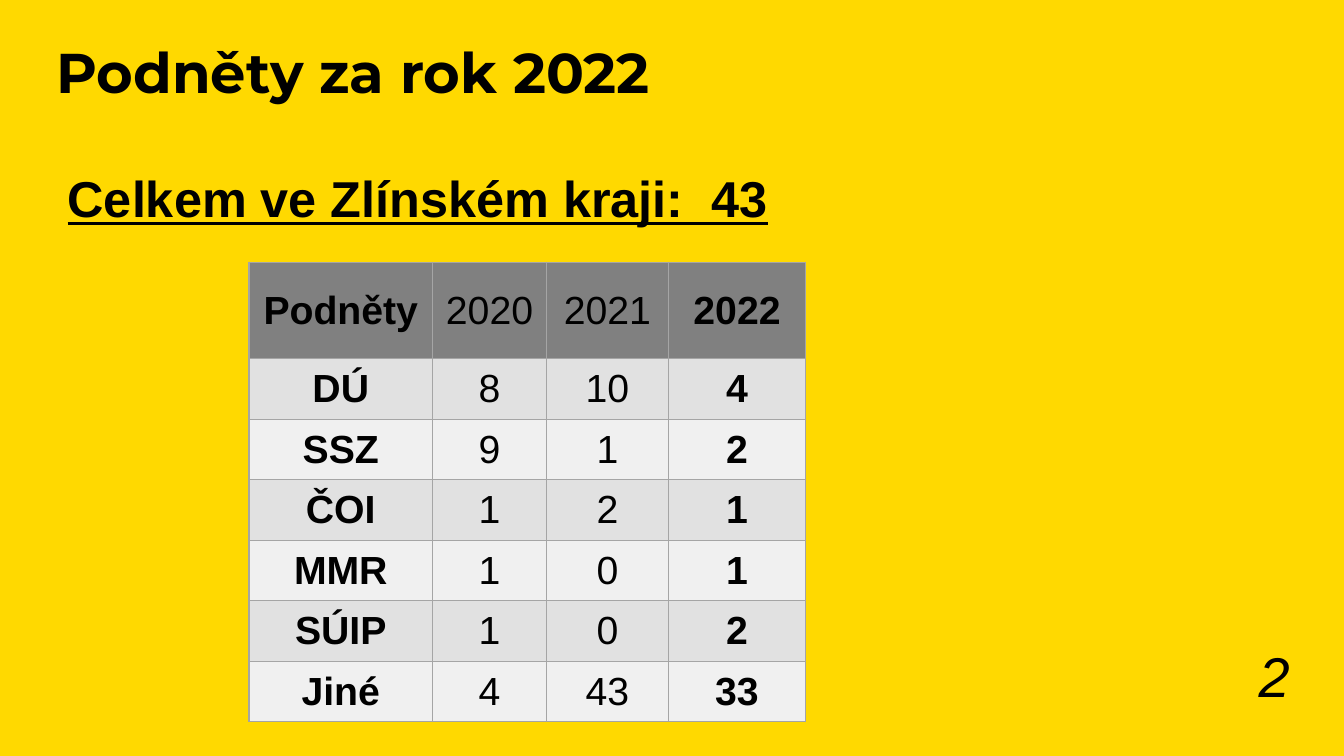
from lxml.etree import SubElement
from pptx import Presentation
from pptx.dml.color import RGBColor
from pptx.enum.text import MSO_ANCHOR as Anchor, MSO_AUTO_SIZE as AutoSize, PP_ALIGN as Align
from pptx.oxml.ns import qn
from pptx.util import Inches, Pt

COMPLAINTS = [
    ("Podněty", "2020", "2021", "2022"),
    ("DÚ", 8, 10, 4),
    ("SSZ", 9, 1, 2),
    ("ČOI", 1, 2, 1),
    ("MMR", 1, 0, 1),
    ("SÚIP", 1, 0, 2),
    ("Jiné", 4, 43, 33),
]


def color(value):
    """Turn a hex string into a colour."""
    return RGBColor.from_string(value)


class SlideBuilder:
    """Holds the style and the current slide; lengths are percentages of the slide."""

    font, heading_font, ink = "Arial", "Montserrat", "000000"
    background, border = "FFD900", "A5A5A5"
    header_fill, band_fills = "808080", ("F0F0F0", "E1E1E1")

    def __init__(self, presentation):
        """Add a title and content slide with a plain background."""
        self.width, self.height = presentation.slide_width, presentation.slide_height
        self.slide = presentation.slides.add_slide(presentation.slide_layouts[1])
        fill = self.slide.background.fill
        fill.solid()
        fill.fore_color.rgb = color(self.background)

    def across(self, share):
        """Return a percentage of the slide width."""
        return round(self.width * share / 100)

    def down(self, share):
        """Return a percentage of the slide height."""
        return round(self.height * share / 100)

    def box(self, left, top, width, height):
        """Return the four lengths of a box."""
        return self.across(left), self.down(top), self.across(width), self.down(height)

    def set_text(self, frame, text, size, align=Align.LEFT, font=None,
                 bold=False, italic=False, underline=False):
        """Put one formatted paragraph into a text frame and return it."""
        frame.text = text
        paragraph = frame.paragraphs[0]
        paragraph.alignment = align
        paragraph.space_before = Pt(0)
        for run in paragraph.runs:
            run.font.name, run.font.size = font or self.font, Pt(size)
            run.font.bold, run.font.italic, run.font.underline = bold, italic, underline
            run.font.color.rgb = color(self.ink)
        return paragraph

    def placeholder(self, shape, box, text, size, **style):
        """Move a placeholder, fill it from the top and return its paragraph."""
        shape.left, shape.top, shape.width, shape.height = self.box(*box)
        frame = shape.text_frame
        frame.auto_size, frame.vertical_anchor = AutoSize.NONE, Anchor.TOP
        return self.set_text(frame, text, size, bold=True, **style)

    def title(self, text, box):
        """Set the slide title."""
        paragraph = self.placeholder(self.slide.shapes.title, box, text, 40,
                                     font=self.heading_font)
        paragraph.line_spacing = 0.9

    def body(self, text, box):
        """Set the underlined summary line without a bullet."""
        paragraph = self.placeholder(self.slide.placeholders[1], box, text, 36, underline=True)
        properties = paragraph._p.get_or_add_pPr()
        properties.set("marL", "0")
        properties.set("indent", "0")
        SubElement(properties, qn("a:buNone"))

    def page_number(self, text, box):
        """Add the page number in the lower right corner."""
        frame = self.slide.shapes.add_textbox(*self.box(*box)).text_frame
        frame.word_wrap, frame.vertical_anchor = True, Anchor.BOTTOM
        self.set_text(frame, text, 40, Align.RIGHT, italic=True)

    def cell(self, cell, text, fill, bold):
        """Fill, frame and label one table cell."""
        properties = cell._tc.get_or_add_tcPr()
        for side in ("lnL", "lnR", "lnT", "lnB"):
            line = SubElement(properties, qn(f"a:{side}"), w=str(Pt(1)))
            SubElement(SubElement(line, qn("a:solidFill")), qn("a:srgbClr"), val=self.border)
        cell.fill.solid()
        cell.fill.fore_color.rgb = color(fill)
        cell.vertical_anchor = Anchor.MIDDLE
        self.set_text(cell.text_frame, text, 28, Align.CENTER, bold=bold)

    def table(self, rows, left, top, widths, header_height, row_height):
        """Add a banded table with bold first and last columns."""
        heights = [header_height] + [row_height] * (len(rows) - 1)
        box = self.box(left, top, sum(widths), sum(heights))
        table = self.slide.shapes.add_table(len(rows), len(widths), *box).table
        for column, width in zip(table.columns, widths):
            column.width = self.across(width)
        for index, (row, height) in enumerate(zip(rows, heights)):
            table.rows[index].height = self.down(height)
            fill = self.band_fills[index % 2] if index else self.header_fill
            for position, value in enumerate(row):
                bold = position in (0, len(row) - 1)
                self.cell(table.cell(index, position), str(value), fill, bold)


def main():
    """Build the slide and save the presentation."""
    presentation = Presentation()
    presentation.slide_width, presentation.slide_height = Inches(13.33), Inches(7.5)
    builder = SlideBuilder(presentation)
    builder.body("Celkem ve Zlínském kraji:  43", (4.28, 21.47, 92.42, 75.33))
    builder.page_number("2", (74.19, 86.8, 22.51, 7.6))
    builder.title("Podněty za rok 2022", (3.45, 5.33, 92.42, 13.6))
    builder.table(COMPLAINTS, 18.53, 34.67, (13.65, 8.48, 9.08, 10.2), 12.8, 8)
    presentation.save("out.pptx")


if __name__ == "__main__":
    main()
